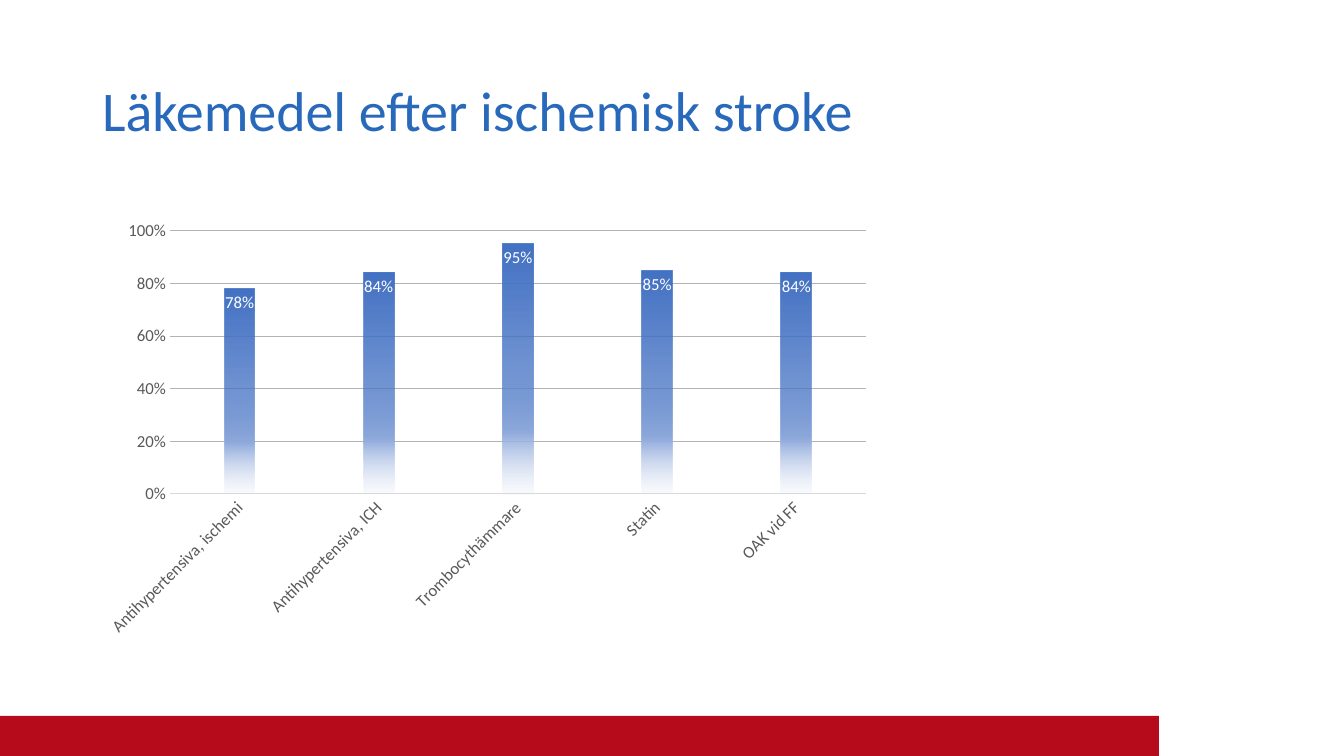
from lxml import etree
from pptx import Presentation
from pptx import util as u
from pptx.chart.data import CategoryChartData
from pptx.dml.color import RGBColor
from pptx.enum import chart as ch
from pptx.enum import shapes, text
from pptx.oxml import parse_xml
from pptx.oxml.ns import nsdecls, qn

# Content
TITLE = "Läkemedel efter ischemisk stroke"
TREATMENTS = [
    ("Antihypertensiva, ischemi", 0.78),
    ("Antihypertensiva, ICH", 0.84),
    ("Trombocythämmare", 0.95),
    ("Statin", 0.85),
    ("OAK vid FF", 0.84),
]

# Geometry in px: left, top, width, height
SLIDE_SIZE = (1344, 756)
TITLE_BOX = (92, 40, 1159, 146)
CHART_BOX = (92, 213, 789, 433)
PLOT_BOX = (170, 231, 696, 263)
FOOTER_BAR = (0, 716, 1159, 40)

# Style
FONT = "Calibri"
RED = RGBColor(0xB5, 0x0B, 0x1B)
TITLE_BLUE = RGBColor(0x28, 0x69, 0xBB)
AXIS_TEXT = RGBColor(0x59, 0x59, 0x59)
AXIS_LINE = RGBColor(0xD9, 0xD9, 0xD9)
GRID_LINE = RGBColor(0xB3, 0xB3, 0xB3)
BLACK = RGBColor(0, 0, 0)
WHITE = RGBColor(0xFF, 0xFF, 0xFF)
BAR_BLUE = RGBColor(0x44, 0x72, 0xC4)
MID_BLUE = RGBColor(0x8F, 0xAA, 0xDC)
PALE_BLUE = RGBColor(0xDA, 0xE3, 0xF3)
# Position %, colour, opacity %
BAR_STOPS = [(0, BAR_BLUE, 100), (51, BAR_BLUE, 75), (75, MID_BLUE, 100), (100, PALE_BLUE, 15)]


def px(length):
    return u.Emu(round(length * 914400 / 100.8))


def set_font(font, size, color):
    font.name = FONT
    font.size = u.Pt(size)
    font.color.rgb = color


def set_line(line, color):
    line.color.rgb = color
    line.width = u.Pt(0.75)


def fill_gradient(series):
    stops = "".join(
        f'<a:gs pos="{pos * 1000}"><a:srgbClr val="{color}">'
        f'<a:alpha val="{opacity * 1000}"/></a:srgbClr></a:gs>'
        for pos, color, opacity in BAR_STOPS
    )
    gradient = parse_xml(
        f'<a:gradFill {nsdecls("a")}><a:gsLst>{stops}</a:gsLst>'
        '<a:lin ang="5400000" scaled="0"/></a:gradFill>'
    )
    series.format.line.fill.background()
    series._element.get_or_add_spPr().insert(0, gradient)


def place_plot(chart):
    plot_area = chart._chartSpace.find(".//" + qn("c:plotArea"))
    for old_layout in plot_area.findall(qn("c:layout")):
        plot_area.remove(old_layout)
    layout = etree.Element(qn("c:layout"))
    manual = etree.SubElement(layout, qn("c:manualLayout"))
    left, top, width, height = CHART_BOX
    plot_left, plot_top, plot_width, plot_height = PLOT_BOX
    settings = [
        ("layoutTarget", "inner"), ("xMode", "edge"), ("yMode", "edge"),
        ("x", (plot_left - left) / width), ("y", (plot_top - top) / height),
        ("w", plot_width / width), ("h", plot_height / height),
    ]
    for name, value in settings:
        etree.SubElement(manual, qn(f"c:{name}")).set("val", str(value))
    plot_area.insert(0, layout)


def add_title(page):
    title = page.shapes.title
    title.left, title.top, title.width, title.height = map(px, TITLE_BOX)
    frame = title.text_frame
    frame.text = TITLE
    frame.word_wrap = True
    frame.vertical_anchor = text.MSO_ANCHOR.MIDDLE
    para = frame.paragraphs[0]
    para.alignment = text.PP_ALIGN.LEFT
    para.line_spacing = 0.9
    set_font(para.font, 40, TITLE_BLUE)


def add_treatment_chart(page):
    data = CategoryChartData(number_format="0%")
    data.categories = [name for name, _ in TREATMENTS]
    data.add_series("Series 1", [share for _, share in TREATMENTS])
    chart = page.shapes.add_chart(
        ch.XL_CHART_TYPE.COLUMN_CLUSTERED, *map(px, CHART_BOX), data
    ).chart
    chart.has_legend = False
    chart.has_title = False
    set_font(chart.font, 10, BLACK)
    place_plot(chart)

    # Axes
    for axis in (chart.category_axis, chart.value_axis):
        axis.major_tick_mark = axis.minor_tick_mark = ch.XL_TICK_MARK.NONE
        set_font(axis.tick_labels.font, 12, AXIS_TEXT)
    categories, values = chart.category_axis, chart.value_axis
    set_line(categories.format.line, AXIS_LINE)
    label_body = categories._element.find(qn("c:txPr")).find(qn("a:bodyPr"))
    label_body.set("rot", "-2700000")
    values.minimum_scale, values.maximum_scale, values.major_unit = 0, 1, 0.2
    values.format.line.fill.background()
    values.tick_labels.number_format = "0%"
    values.tick_labels.number_format_is_linked = False
    values.has_major_gridlines = True
    set_line(values.major_gridlines.format.line, GRID_LINE)

    # Bars and their labels
    plot = chart.plots[0]
    plot.gap_width, plot.overlap = 355, -70
    plot.vary_by_categories = False
    series = plot.series[0]
    series.invert_if_negative = False
    fill_gradient(series)
    labels = series.data_labels
    labels.show_value = True
    labels.position = ch.XL_LABEL_POSITION.INSIDE_END
    labels.number_format = "0%"
    labels.number_format_is_linked = False
    set_font(labels.font, 12, WHITE)


def main():
    deck = Presentation()
    deck.slide_width, deck.slide_height = map(px, SLIDE_SIZE)
    page = deck.slides.add_slide(deck.slide_layouts[5])

    # Footer bar
    bar = page.shapes.add_shape(shapes.MSO_SHAPE.RECTANGLE, *map(px, FOOTER_BAR))
    bar.shadow.inherit = False
    bar.fill.solid()
    bar.fill.fore_color.rgb = RED
    bar.line.fill.background()

    add_title(page)
    add_treatment_chart(page)
    deck.save("out.pptx")


if __name__ == "__main__":
    main()
